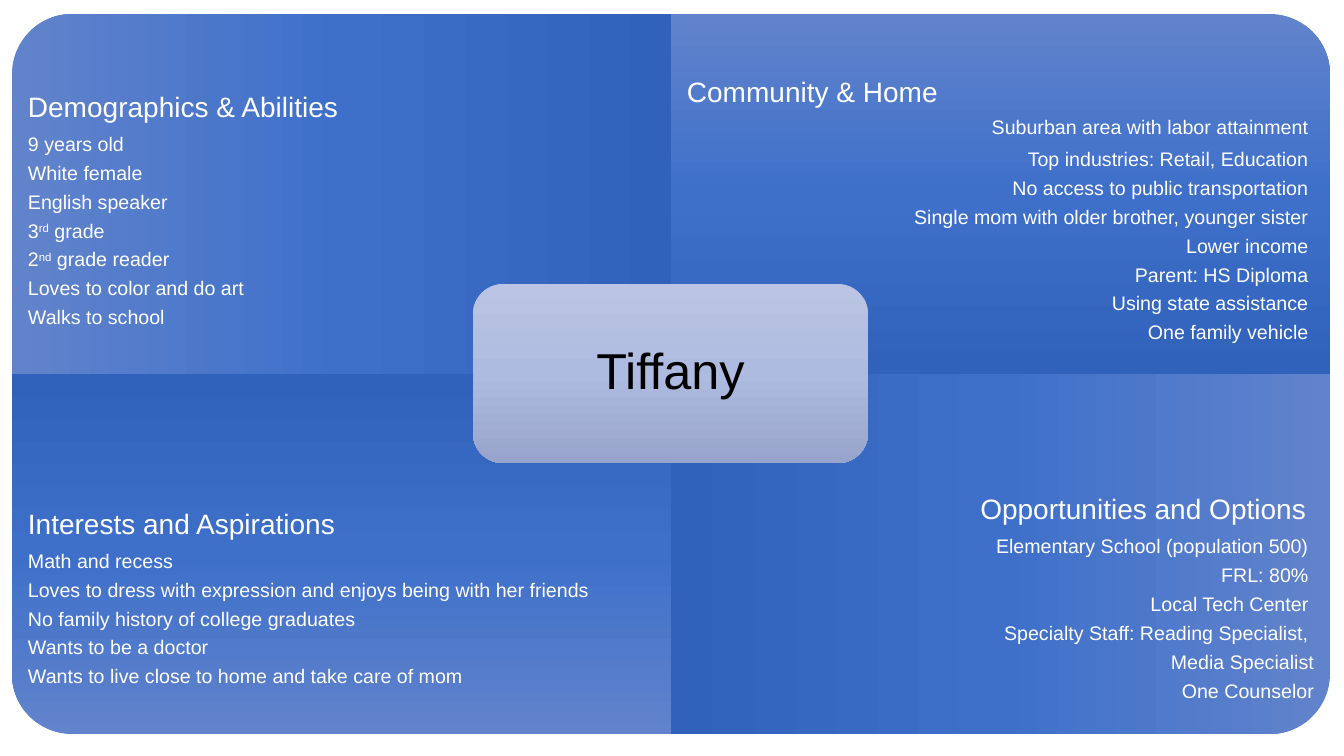
from copy import deepcopy
from dataclasses import dataclass

from pptx import Presentation
from pptx.dml.color import RGBColor
from pptx.enum.shapes import MSO_SHAPE
from pptx.enum.text import MSO_ANCHOR, PP_ALIGN
from pptx.util import Emu, Pt

SCALE = 914400 / 100.8


@dataclass(frozen=True)
class Theme:
    font: str = "Arial"
    panel: tuple = ("6183CB", "3E70CA", "3062BB")
    hub: tuple = ("BBC5E3", "AEBBE0", "98A4CB")
    light: str = "FFFFFF"
    dark: str = "000000"
    name: int = 36
    head: int = 20
    item: int = 14


THEME = Theme()
LEFT, TOP, WIDE, HIGH = 12, 14, 659, 360
BODY = 270  # height of each text area
PAD = 16

# Column, row, turn, heading, items; ^ encloses a superscript
PANELS = [
    (0, 0, 270, "Demographics & Abilities", [
        "9 years old", "White female", "English speaker", "3^rd^ grade",
        "2^nd^ grade reader", "Loves to color and do art",
        "Walks to school"]),
    (1, 0, 0, "Community & Home", [
        "Suburban area with labor attainment ",
        "Top industries: Retail, Education ",
        "No access to public transportation ",
        "Single mom with older brother, younger sister ",
        "Lower income ", "Parent: HS Diploma ",
        "Using state assistance ", "One family vehicle "]),
    (0, 1, 180, "Interests and Aspirations", [
        "Math and recess",
        "Loves to dress with expression and enjoys being with her friends",
        "No family history of college graduates", "Wants to be a doctor",
        "Wants to live close to home and take care of mom"]),
    (1, 1, 90, "Opportunities and Options ", [
        "Elementary School (population 500) ", "FRL: 80% ",
        "Local Tech Center ", "Specialty Staff: Reading Specialist, ",
        "Media Specialist", "One Counselor"]),
]


def px(*nums):
    return [Emu(round(n * SCALE)) for n in nums]


def shade(shape, tones):
    """Fill from top to bottom with three evenly spaced tones."""
    fill = shape.fill
    fill.gradient()
    fill.gradient_angle = 270
    first = fill.gradient_stops[0]._gs
    first.addnext(deepcopy(first))
    for i, (stop, tone) in enumerate(zip(fill.gradient_stops, tones)):
        stop.position = i / 2
        stop.color.rgb = RGBColor.from_string(tone)
    shape.line.fill.background()
    shape.shadow.inherit = False


def setup(frame, pad):
    frame.word_wrap = True
    frame.vertical_anchor = MSO_ANCHOR.MIDDLE
    (frame.margin_left, frame.margin_top,
     frame.margin_right, frame.margin_bottom) = px(pad, pad, pad, pad)


def write(para, text, size, color, align, after=0):
    para.alignment = align
    para.line_spacing = 0.9
    para.space_after = Pt(after)
    for i, part in enumerate(text.split("^")):
        run = para.add_run()
        run.text = part
        run.font.name = THEME.font
        run.font.size = Pt(size)
        run.font.color.rgb = RGBColor.from_string(color)
        if i % 2:
            run._r.get_or_add_rPr().set("baseline", "30000")


def add_panel(slide, col, row, turn):
    x, y = LEFT + col * WIDE, TOP + row * HIGH
    wide, high = (HIGH, WIDE) if turn % 180 else (WIDE, HIGH)
    box = px(x + (WIDE - wide) / 2, y + (HIGH - high) / 2, wide, high)
    shape = slide.shapes.add_shape(MSO_SHAPE.ROUND_1_RECTANGLE, *box)
    shape.rotation = turn
    shade(shape, THEME.panel)


def add_list(slide, col, row, head, items):
    y = 464 if row else 76
    box = slide.shapes.add_textbox(*px(LEFT + col * WIDE, y, WIDE, BODY))
    frame = box.text_frame
    setup(frame, PAD)
    align = PP_ALIGN.RIGHT if col else PP_ALIGN.LEFT
    inner = col == 1 and row == 0  # this heading sits at the inner edge
    write(frame.paragraphs[0], head, THEME.head, THEME.light,
          PP_ALIGN.LEFT if inner else align, 6.5 if inner else 8)
    for i, item in enumerate(items):
        after = 8 if inner and i == 0 else 5.5
        write(frame.add_paragraph(), item, THEME.item, THEME.light,
              align, after)


def add_hub(slide, text):
    shape = slide.shapes.add_shape(
        MSO_SHAPE.ROUNDED_RECTANGLE, *px(473, 284, 395, 179))
    shade(shape, THEME.hub)
    setup(shape.text_frame, PAD)
    write(shape.text_frame.paragraphs[0], text, THEME.name, THEME.dark,
          PP_ALIGN.CENTER)


def main():
    deck = Presentation()
    deck.slide_width, deck.slide_height = px(1344, 756)
    slide = deck.slides.add_slide(deck.slide_layouts[6])

    # Four quarters with their lists
    for col, row, turn, head, items in PANELS:
        add_panel(slide, col, row, turn)
        add_list(slide, col, row, head, items)

    # Name in the middle
    add_hub(slide, "Tiffany")
    deck.save("out.pptx")


if __name__ == "__main__":
    main()
